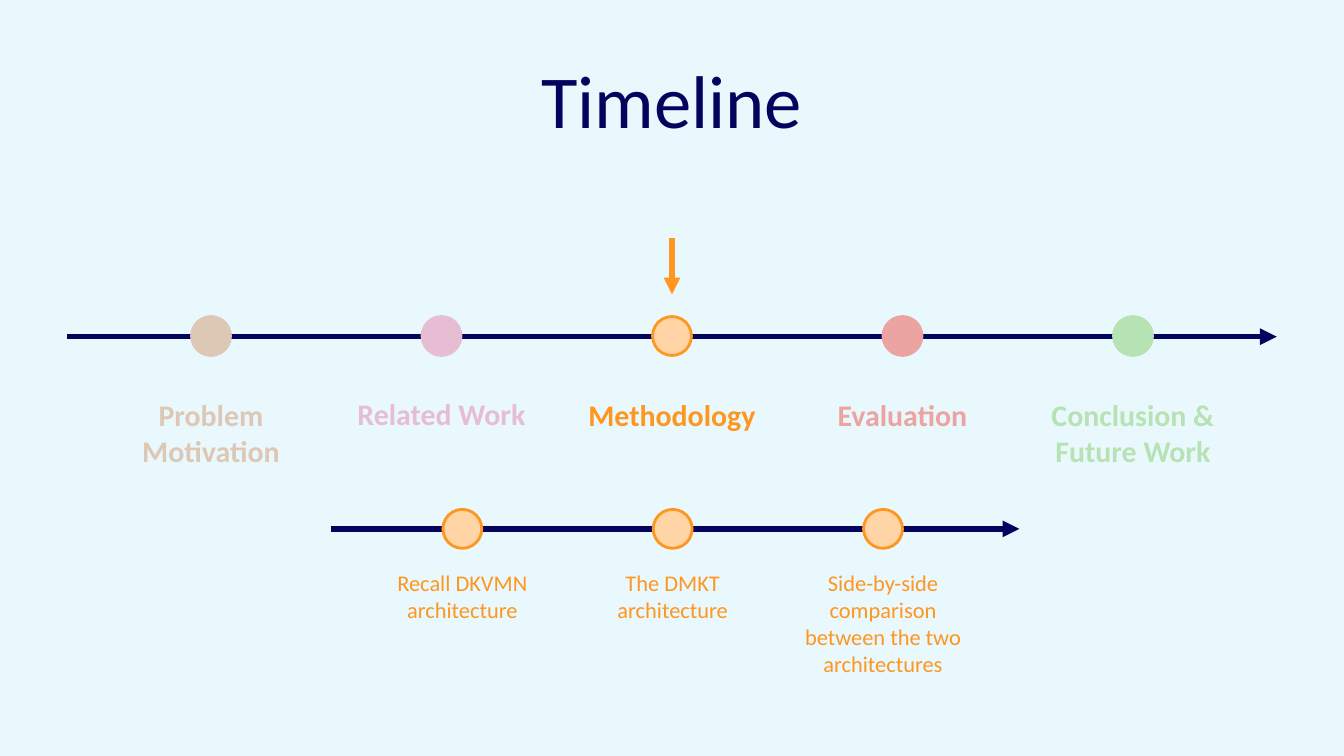
from pptx import Presentation
from pptx.dml.color import RGBColor
from pptx.enum.shapes import MSO_CONNECTOR, MSO_SHAPE
from pptx.enum.text import MSO_ANCHOR, MSO_AUTO_SIZE, PP_ALIGN
from pptx.oxml.ns import qn
from pptx.util import Inches, Pt
from lxml.etree import SubElement

NAVY, ORANGE, PEACH = "03045E", "FF961F", "FFD5A5"
DOT = 0.58

# Label, dot fill, accent, label top, label height
STAGES = [
    ("Problem Motivation", "DDC8B6", "DDC8B6", 5.86, 1.18),
    ("Related Work", "E7BDD3", "E7BDD3", 5.84, 0.64),
    ("Methodology", PEACH, ORANGE, 5.86, 0.64),
    ("Evaluation", "EBA4A1", "EBA4A1", 5.86, 0.64),
    ("Conclusion & Future Work", "B7E3B4", "B7E3B4", 5.86, 1.18),
]
STEPS = [
    ("Recall DKVMN architecture", 0.91),
    ("The DMKT architecture", 0.91),
    ("Side-by-side comparison between the two architectures", 1.72),
]


def rgb(color):
    return RGBColor.from_string(color)


class TimelineSlide:
    font = "Calibri"
    line_width = Pt(6)
    outline_width = Pt(3)

    def __init__(self, prs, background):
        self.s = prs.slides.add_slide(prs.slide_layouts[5])
        fill = self.s.background.fill
        fill.solid()
        fill.fore_color.rgb = rgb(background)

    def set_text(self, sp, text, size, color, bold=False):
        tf = sp.text_frame
        tf.word_wrap = True
        tf.auto_size = MSO_AUTO_SIZE.SHAPE_TO_FIT_TEXT
        p = tf.paragraphs[0]
        p.alignment = PP_ALIGN.CENTER
        r = p.add_run()
        r.text = text
        r.font.name = self.font
        r.font.size = Pt(size)
        r.font.bold = bold
        r.font.color.rgb = rgb(color)

    def title(self, text, left, top, width, height):
        sp = self.s.shapes.title
        sp.left, sp.top = Inches(left), Inches(top)
        sp.width, sp.height = Inches(width), Inches(height)
        sp.text_frame.vertical_anchor = MSO_ANCHOR.MIDDLE
        self.set_text(sp, text, 80, NAVY)

    def label(self, text, center, top, width, height, size, color, bold=False):
        sp = self.s.shapes.add_textbox(
            Inches(center - width / 2), Inches(top), Inches(width), Inches(height))
        self.set_text(sp, text, size, color, bold)

    def arrow(self, x1, y1, x2, y2, color):
        sp = self.s.shapes.add_connector(
            MSO_CONNECTOR.STRAIGHT, Inches(x1), Inches(y1), Inches(x2), Inches(y2))
        sp.line.color.rgb = rgb(color)
        sp.line.width = self.line_width
        props = sp._element.spPr
        SubElement(props.find(qn("a:ln")), qn("a:tailEnd"), type="triangle")
        SubElement(props, qn("a:effectLst"))

    def dot(self, x, y, fill, outline):
        """Draw a milestone centred on (x, y)."""
        sp = self.s.shapes.add_shape(
            MSO_SHAPE.OVAL, Inches(x - DOT / 2), Inches(y - DOT / 2),
            Inches(DOT), Inches(DOT))
        sp.shadow.inherit = False
        sp.fill.solid()
        sp.fill.fore_color.rgb = rgb(fill)
        sp.line.color.rgb = rgb(outline)
        sp.line.width = self.outline_width


def main():
    prs = Presentation()
    prs.slide_width, prs.slide_height = Inches(20), Inches(11.25)
    slide = TimelineSlide(prs, "E9F8FC")
    slide.title("Timeline", 2, 0.75, 16, 1.45)

    slide.arrow(1, 5.01, 19, 5.01, NAVY)
    for i, (text, fill, accent, top, height) in enumerate(STAGES):
        x = 10 + 3.43 * (i - 2)
        slide.dot(x, 5, fill, accent)
        slide.label(text, x, top, 3.08, height, 32, accent, bold=True)
    slide.arrow(10, 3.54, 10, 4.38, ORANGE)

    slide.arrow(4.92, 7.87, 15.17, 7.87, NAVY)
    for i, (text, height) in enumerate(STEPS):
        x = 10.01 + 3.13 * (i - 1)
        slide.dot(x, 7.87, PEACH, ORANGE)
        slide.label(text, x, 8.42, 2.58, height, 24, ORANGE)

    prs.save("out.pptx")


if __name__ == "__main__":
    main()
